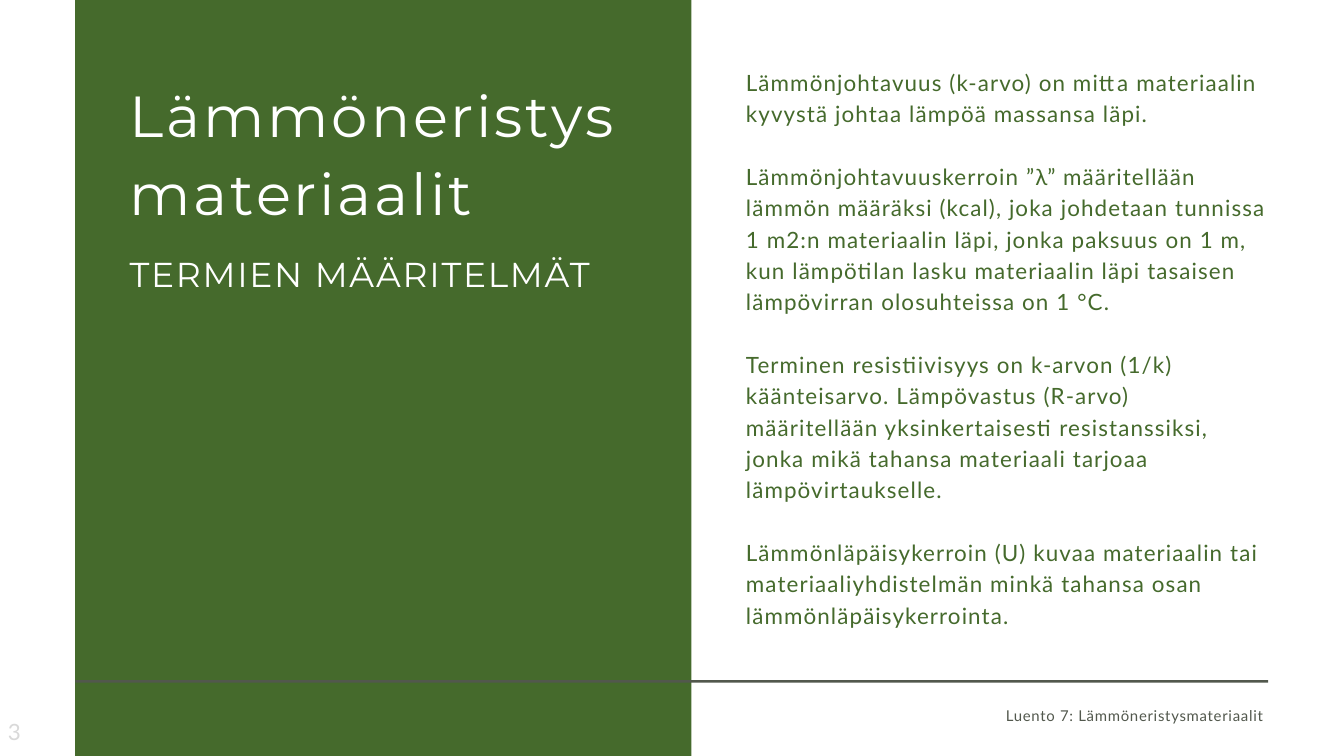
from pptx import Presentation
from pptx.dml.color import RGBColor
from pptx.enum.shapes import MSO_SHAPE
from pptx.enum.text import MSO_ANCHOR, PP_ALIGN
from pptx.util import Inches, Pt

COLORS = {"green": "456A2C", "grey": "52584D", "white": "FFFFFF", "pale": "D9D9D9"}

# Text styles: font, size, colour, letter spacing and line spacing in points
STYLES = {
    "title": ("Montserrat", 62, "white", 3.1, 83.7),
    "subtitle": ("Montserrat", 37, "white", 1.9, 48.1),
    "body": ("Lato", 24, "green", 1.2, 33.6),
    "footer": ("Lato", 16, "grey", 0.8, 22.4),
    "number": ("Lato", 24, "pale", 1.2, None),
}

DEFINITIONS = [
    "Lämmönjohtavuus (k-arvo) on mitta materiaalin kyvystä johtaa lämpöä massansa läpi.",
    "Lämmönjohtavuuskerroin ”λ” määritellään lämmön määräksi (kcal), joka johdetaan "
    "tunnissa 1 m2:n materiaalin läpi, jonka paksuus on 1 m, kun lämpötilan lasku "
    "materiaalin läpi tasaisen lämpövirran olosuhteissa on 1 °C.",
    "Terminen resistiivisyys on k-arvon (1/k) käänteisarvo. Lämpövastus (R-arvo) "
    "määritellään yksinkertaisesti resistanssiksi, jonka mikä tahansa materiaali "
    "tarjoaa lämpövirtaukselle.",
    "Lämmönläpäisykerroin (U) kuvaa materiaalin tai materiaaliyhdistelmän minkä "
    "tahansa osan lämmönläpäisykerrointa.",
]


def part(box, x, y, w, h):
    """Box inside another box, in percent of its width and height."""
    left, top, width, height = box
    return (int(left + width * x / 100), int(top + height * y / 100),
            int(width * w / 100), int(height * h / 100))


def add_bar(s, box, color):
    sp = s.shapes.add_shape(MSO_SHAPE.RECTANGLE, *box)
    sp.shadow.inherit = False
    sp.fill.solid()
    sp.fill.fore_color.rgb = RGBColor.from_string(COLORS[color])
    sp.line.fill.background()


def add_text(s, box, texts, style, align=PP_ALIGN.LEFT, gap=0, inset=0,
             anchor=MSO_ANCHOR.TOP):
    name, size, color, tracking, leading = STYLES[style]
    tf = s.shapes.add_textbox(*box).text_frame
    frame = {"word_wrap": True, "vertical_anchor": anchor,
             "margin_left": Inches(inset), "margin_right": Inches(inset),
             "margin_top": Inches(inset / 2), "margin_bottom": Inches(inset / 2)}
    for key, value in frame.items():
        setattr(tf, key, value)
    for i, text in enumerate(texts):
        p = tf.add_paragraph() if i else tf.paragraphs[0]
        p.alignment = align
        if leading:
            p.line_spacing = Pt(leading)
        if i < len(texts) - 1:
            p.space_after = Pt(gap)
        r = p.add_run()
        r.text = text
        for key, value in {"name": name, "size": Pt(size)}.items():
            setattr(r.font, key, value)
        r.font.color.rgb = RGBColor.from_string(COLORS[color])
        r._r.get_or_add_rPr().set("spc", str(round(tracking * 100)))


def title_panel(s, box):
    add_bar(s, box, "green")
    add_text(s, part(box, 8.83, 11.85, 82.44, 19.37), ["Lämmöneristysmateriaalit"], "title")
    add_text(s, part(box, 8.83, 34.14, 82.44, 5.34), ["TERMIEN MÄÄRITELMÄT"], "subtitle")


def definitions(s, box):
    # One empty line's worth of space between definitions
    add_text(s, box, DEFINITIONS, "body", gap=STYLES["body"][-1])


def footer(s, box):
    add_bar(s, part(box, 0, 0, 100, 6.25), "grey")
    add_text(s, part(box, 53.18, 54.69, 46.82, 45.31),
             ["Luento 7: Lämmöneristysmateriaalit "], "footer", align=PP_ALIGN.RIGHT)


def page_number(s, box):
    add_text(s, box, ["3"], "number", inset=0.1, anchor=MSO_ANCHOR.MIDDLE)


def main():
    prs = Presentation()
    prs.slide_width, prs.slide_height = Inches(20), Inches(11.25)
    s = prs.slides.add_slide(prs.slide_layouts[6])
    page = (0, 0, prs.slide_width, prs.slide_height)

    definitions(s, part(page, 55.5, 8.53, 38.9, 71.73))
    title_panel(s, part(page, 5.6, -3.29, 45.85, 106.49))
    footer(s, part(page, 5.6, 89.96, 88.75, 5.69))
    page_number(s, part(page, 0.1, 95.02, 11.65, 3.56))
    prs.save("out.pptx")


if __name__ == "__main__":
    main()
